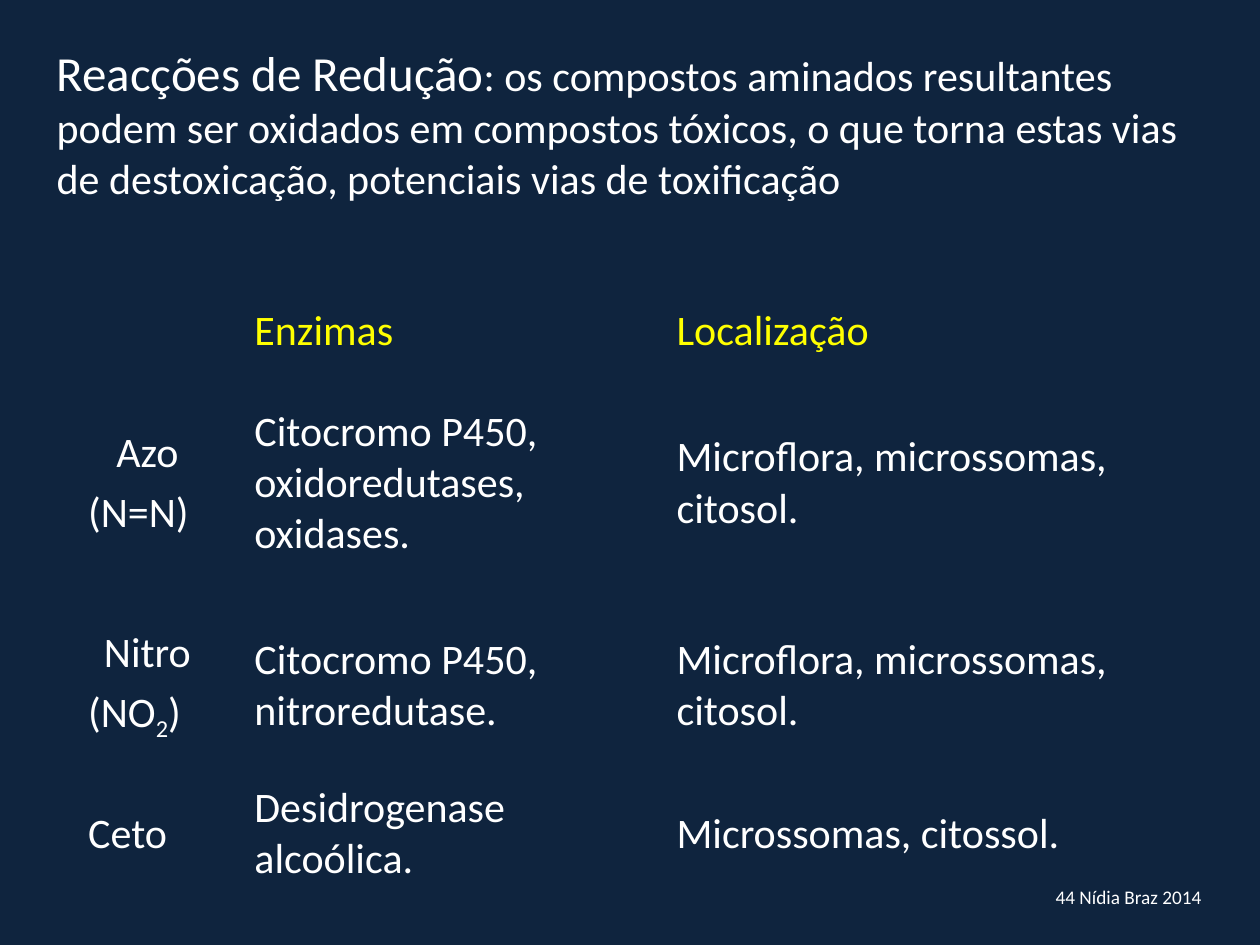
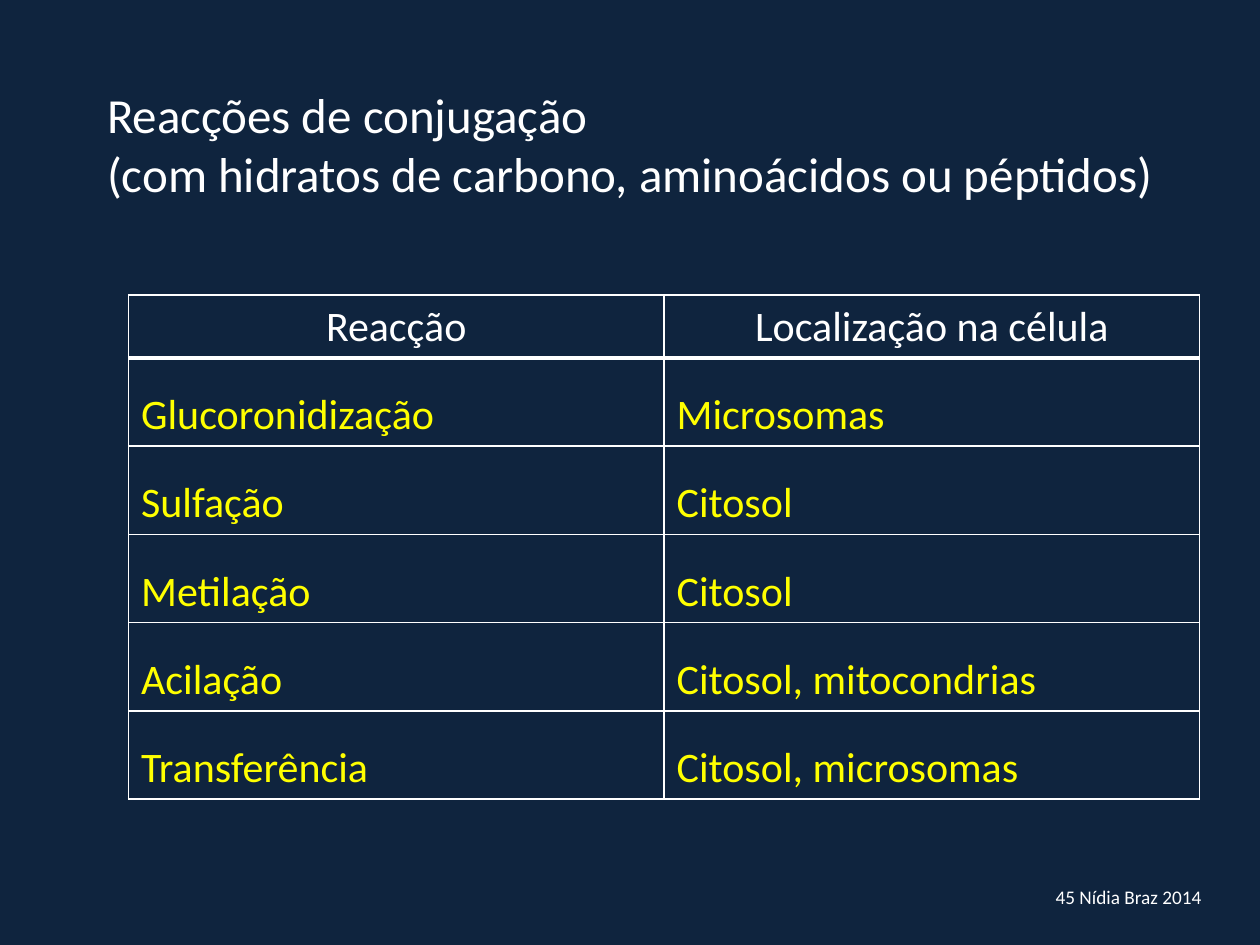
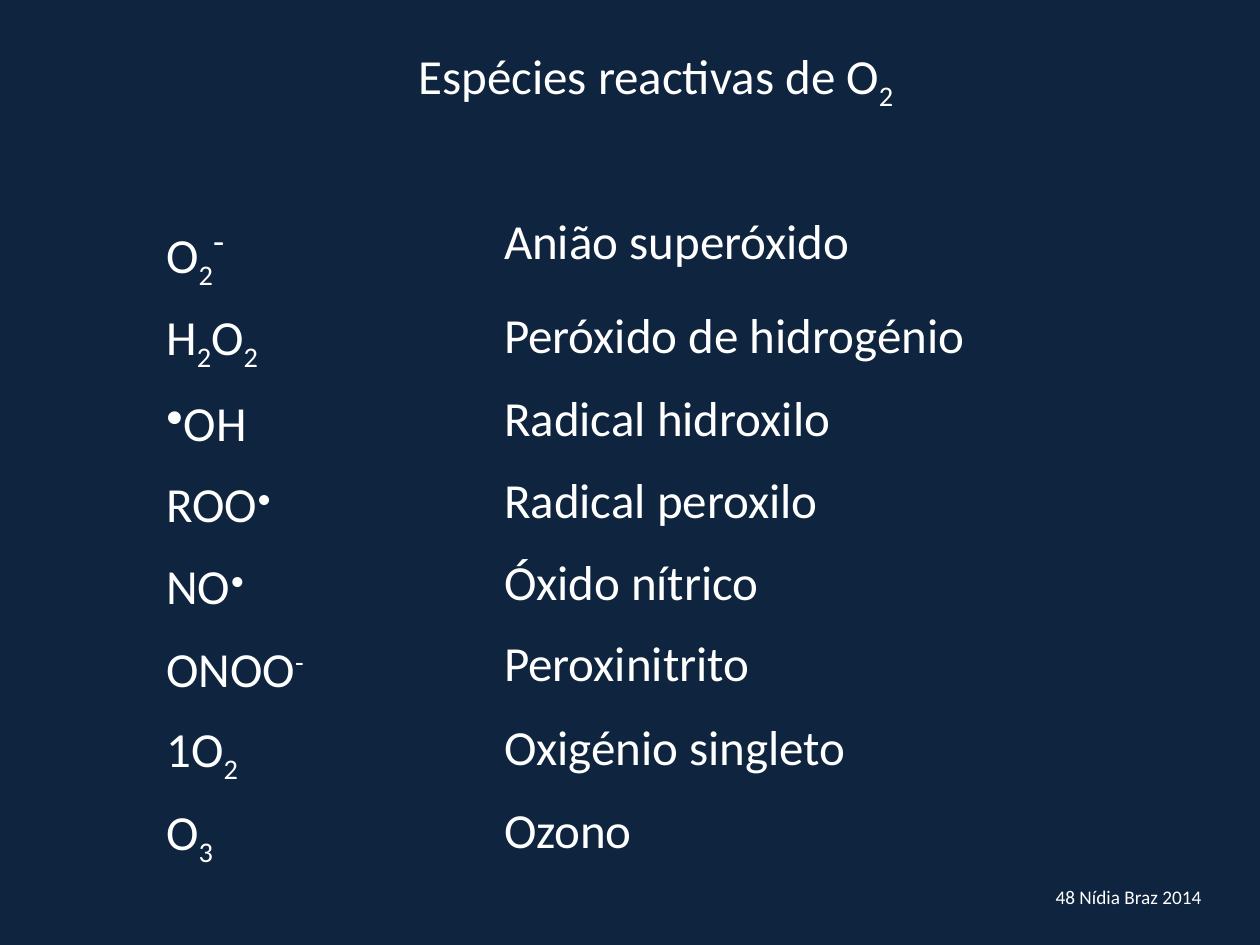
from lxml import etree
from pptx import Presentation
from pptx import util as u
from pptx.dml.color import RGBColor
from pptx.enum import text
from pptx.oxml import ns

NAVY = RGBColor(0x0F, 0x24, 0x3E)
WHITE = RGBColor(0xFF, 0xFF, 0xFF)
YELLOW = RGBColor(0xFF, 0xFF, 0x00)
FONT = "Calibri"
TITLE_SIZE, BODY_SIZE, FOOTER_SIZE = 28, 24, 11
LEFT, CENTER = text.PP_ALIGN.LEFT, text.PP_ALIGN.CENTER
TOP, MIDDLE = text.MSO_ANCHOR.TOP, text.MSO_ANCHOR.MIDDLE
NO_GRID_STYLE = "{2D5ABB26-0587-4C30-8999-92F81FD0307C}"
SHIFTS = {"_": -25000, "^": 30000}


def write(paragraph, words, size=BODY_SIZE, color=WHITE, align=LEFT, spacing=None, raised=None):
    """Append words; "_" lowers and "^" raises the character that follows it."""
    paragraph.alignment = align
    if spacing:
        paragraph.line_spacing = spacing
    pieces, mark = [], ""
    for char in words:
        if char in SHIFTS:
            mark = char
        elif mark or not pieces or pieces[-1][0]:
            pieces.append([mark, char])
            mark = ""
        else:
            pieces[-1][1] += char
    for mark, piece in pieces:
        run = paragraph.add_run()
        run.text = piece
        run.font.name = FONT
        run.font.size = u.Pt(raised if raised and mark == "^" else size)
        run.font.color.rgb = color
        if mark:
            run.font._element.set("baseline", str(SHIFTS[mark]))


def add_grid(slide, left, top, columns, rows, inset=0.1):
    """Add a plain table without style, with the given column widths and row heights."""
    table = slide.shapes.add_table(len(rows), len(columns), u.Inches(left), u.Inches(top),
                                   u.Inches(sum(columns)), u.Inches(sum(rows))).table
    table.first_row = table.horz_banding = False
    table._tbl.tblPr.find(ns.qn("a:tableStyleId")).text = NO_GRID_STYLE
    for column, width in zip(table.columns, columns):
        column.width = u.Inches(width)
    for row, height in zip(table.rows, rows):
        row.height = u.Inches(height)
    for cell in table.iter_cells():
        cell.fill.background()
        cell.margin_left = cell.margin_right = u.Inches(inset)
        cell.margin_top = cell.margin_bottom = u.Inches(0.05)
    return table


deck = Presentation()
deck.slide_width, deck.slide_height = u.Inches(10), u.Inches(7.5)
background = deck.slide_master.background.fill
background.solid()
background.fore_color.rgb = NAVY

# Shared frame: title area and page footer
pages = [
    (44, (0.35, 0.29, 9.37, 1.42)),
    (45, (0.75, 0.62, 8.69, 1.25)),
    (48, (0.94, 0.31, 8.53, 0.77)),
]
slides, titles = [], []
for number, title_area in pages:
    slide = deck.slides.add_slide(deck.slide_layouts[5])
    title = slide.shapes.title
    title.left, title.top, title.width, title.height = map(u.Inches, title_area)
    title.text_frame.vertical_anchor = TOP
    title.text_frame.auto_size = text.MSO_AUTO_SIZE.NONE
    footer = slide.shapes.add_textbox(*map(u.Inches, (8.15, 6.98, 1.65, 0.29))).text_frame
    footer.word_wrap = True
    write(footer.paragraphs[0], f"{number} Nídia Braz 2014 ", size=FOOTER_SIZE, align=CENTER)
    slides.append(slide)
    titles.append(title.text_frame)
reduction, conjugation, oxygen = slides

# Reduction reactions
heading = titles[0].paragraphs[0]
write(heading, "Reacções de Redução", size=TITLE_SIZE)
write(heading, ": os compostos aminados resultantes podem ser oxidados em compostos tóxicos, "
               "o que torna estas vias de destoxicação, potenciais vias de toxificação")

enzymes = [
    ("", "Enzimas", "Localização"),
    ("Azo\n(N=N)", "Citocromo P450, oxidoredutases, oxidases.", "Microflora, microssomas, citosol."),
    ("Nitro\n(NO_2)", "Citocromo P450, nitroredutase.", "Microflora, microssomas, citosol."),
    ("Ceto", "Desidrogenase alcoólica.", "Microssomas, citossol."),
]
grid = add_grid(reduction, 0.51, 2.33, [1.32, 3.35, 4.22], [0.59, 1.83, 1.39, 0.96], inset=0.19)
for r, row in enumerate(enzymes):
    for c, entry in enumerate(row):
        cell = grid.cell(r, c)
        cell.vertical_anchor = MIDDLE
        group, *formula = entry.split("\n")
        write(cell.text_frame.paragraphs[0], group, color=WHITE if r else YELLOW,
              align=CENTER if formula else LEFT)
        for line in formula:
            paragraph = cell.text_frame.add_paragraph()
            paragraph.space_before = u.Pt(0.2 * BODY_SIZE)
            write(paragraph, line)

# Conjugation reactions
write(titles[1].paragraphs[0], "Reacções de conjugação", size=TITLE_SIZE)
write(titles[1].add_paragraph(), "(com hidratos de carbono, aminoácidos ou péptidos)", size=TITLE_SIZE)

locations = [
    ("Reacção", "Localização na célula"),
    ("Glucoronidização", "Microsomas"),
    ("Sulfação", "Citosol"),
    ("Metilação", "Citosol"),
    ("Acilação", "Citosol, mitocondrias"),
    ("Transferência", "Citosol, microsomas"),
]
grid = add_grid(conjugation, 1.02, 2.34, [4.25] * 2, [0.5] + [0.7] * 5)
for r, row in enumerate(locations):
    for c, entry in enumerate(row):
        cell = grid.cell(r, c)
        if r == 0:
            write(cell.text_frame.paragraphs[0], entry, align=CENTER)
        else:
            write(cell.text_frame.paragraphs[0], entry, color=YELLOW, spacing=1.5)
        # White borders, with a heavy rule under the header
        weights = {"lnL": 1, "lnR": 1, "lnT": 3 if r == 1 else 1, "lnB": 3 if r == 0 else 1}
        for position, (side, weight) in enumerate(weights.items()):
            border = etree.Element(ns.qn(f"a:{side}"), w=str(u.Pt(weight)))
            fill = etree.SubElement(border, ns.qn("a:solidFill"))
            etree.SubElement(fill, ns.qn("a:srgbClr"), val=str(WHITE))
            cell._tc.get_or_add_tcPr().insert(position, border)

# Reactive oxygen species
write(titles[2].paragraphs[0], "Espécies reactivas de O_2", size=TITLE_SIZE, align=CENTER)

species = [
    ("O_2^-", "Anião superóxido"),
    ("H_2O_2", "Peróxido de hidrogénio"),
    ("•OH", "Radical hidroxilo"),
    ("ROO^•", "Radical peroxilo"),
    ("NO^•", "Óxido nítrico"),
    ("ONOO^-", "Peroxinitrito"),
    ("1O_2", "Oxigénio singleto"),
    ("O_3", "Ozono"),
]
grid = add_grid(oxygen, 1.22, 1.64, [2.68, 5.04], [0.58, 0.66, 0.65, 0.65, 0.65, 0.66, 0.66, 0.66])
for r, (formula, name) in enumerate(species):
    symbol = grid.cell(r, 0)
    symbol.vertical_anchor = MIDDLE
    paragraph = symbol.text_frame.paragraphs[0]
    write(paragraph, formula.lstrip("•"), size=TITLE_SIZE, raised=36 if r == 0 else None)
    if formula.startswith("•"):
        etree.SubElement(paragraph._p.get_or_add_pPr(), ns.qn("a:buChar"), char="•")
    write(grid.cell(r, 1).text_frame.paragraphs[0], name, size=TITLE_SIZE)

deck.save("out.pptx")
